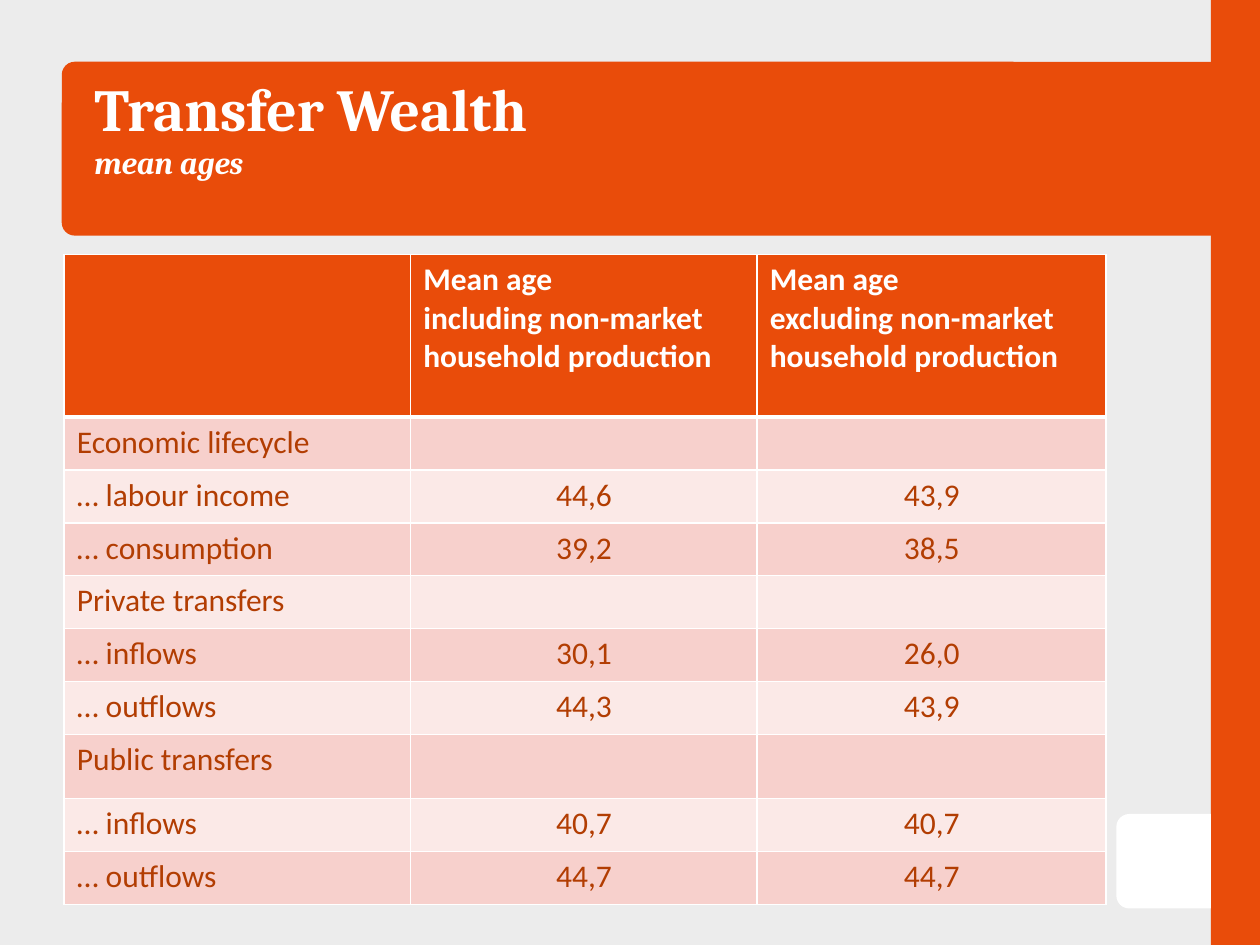
from lxml import etree
from pptx import Presentation
from pptx.dml.color import RGBColor
from pptx.enum.shapes import MSO_SHAPE
from pptx.enum.text import PP_ALIGN
from pptx.oxml.ns import qn
from pptx.util import Inches, Pt

RECTANGLE = MSO_SHAPE.RECTANGLE
ROUNDED = MSO_SHAPE.ROUNDED_RECTANGLE
ROUNDED_TOP = MSO_SHAPE.ROUND_2_SAME_RECTANGLE
LEFT, CENTER = PP_ALIGN.LEFT, PP_ALIGN.CENTER

ORANGE, RUST, WHITE, GREY = "E94C0A", "B23D02", "FFFFFF", "ECECEC"
BANDS = ("F7D0CC", "FBE9E7")
COLUMN_WIDTHS = (2.75, 2.75, 2.77)
HEADER_HEIGHT, ROW_HEIGHT, TALL_ROW_HEIGHT = 1.29, 0.42, 0.51
TALL_ROW = "Public transfers"
ROWS = (
    ("", "Mean age\nincluding non-market household production",
     "Mean age\nexcluding non-market household production"),
    ("Economic lifecycle", "", ""),
    ("… labour income", "44,6", "43,9"),
    ("… consumption", "39,2", "38,5"),
    ("Private transfers", "", ""),
    ("… inflows", "30,1", "26,0"),
    ("… outflows", "44,3", "43,9"),
    (TALL_ROW, "", ""),
    ("… inflows", "40,7", "40,7"),
    ("… outflows", "44,7", "44,7"),
)


def paint(fill, color):
    """Give a fill one solid colour."""
    fill.solid()
    fill.fore_color.rgb = RGBColor.from_string(color)


def style_run(run, font_name, size, color, bold=False, italic=False):
    """Set the font of a run."""
    font = run.font
    font.name, font.size, font.bold, font.italic = font_name, Pt(size), bold, italic
    font.color.rgb = RGBColor.from_string(color)


def add_panel(slide, kind, box, color, adjustments=(), rotation=0):
    """Add a plain filled shape."""
    shape = slide.shapes.add_shape(kind, *map(Inches, box))
    shape.shadow.inherit = False
    for index, value in enumerate(adjustments):
        shape.adjustments[index] = value
    shape.rotation = rotation
    paint(shape.fill, color)
    shape.line.fill.background()


def add_background(slide):
    """Set the backdrop, the side bar and the page tab."""
    paint(slide.background.fill, GREY)
    add_panel(slide, RECTANGLE, (9.61, 0, 0.39, 7.5), ORANGE)
    add_panel(slide, ROUNDED_TOP, (8.86, 6.46, 0.75, 0.75), WHITE, (0.136, 0), 270)


def add_title(slide, box):
    """Add the title band with its heading and subheading."""
    left, top, width, height = box
    add_panel(slide, ROUNDED, box, ORANGE, (0.075,))
    text_box = slide.shapes.add_textbox(
        Inches(left + 0.16), Inches(top), Inches(width - 0.31), Inches(height))
    frame = text_box.text_frame
    frame.word_wrap = True
    frame.margin_top = Inches(0.08)
    frame.text = "Transfer Wealth\vmean ages"
    heading, subheading = frame.paragraphs[0].runs
    style_run(heading, "Cambria", 34, WHITE, bold=True)
    style_run(subheading, "Cambria", 18, WHITE, bold=True, italic=True)


def set_borders(cell, widths):
    """Draw white borders in the order left, right, top, bottom."""
    properties = cell._tc.get_or_add_tcPr()
    for index, (side, width) in enumerate(zip("LRTB", widths)):
        line = etree.Element(qn(f"a:ln{side}"), w=str(Pt(width)))
        fill = etree.SubElement(line, qn("a:solidFill"))
        etree.SubElement(fill, qn("a:srgbClr"), val=WHITE)
        properties.insert(index, line)


def fill_cell(cell, text, row, column):
    """Write and format one table cell."""
    is_header = row == 0
    paint(cell.fill, ORANGE if is_header else BANDS[(row - 1) % 2])
    set_borders(cell, (1, 1, 3 if row == 1 else 1, 3 if is_header else 1))
    cell.text_frame.text = text
    for paragraph in cell.text_frame.paragraphs:
        paragraph.alignment = LEFT if is_header or column == 0 else CENTER
        for run in paragraph.runs:
            style_run(run, "Calibri", 18, WHITE if is_header else RUST, is_header)


def add_mean_age_table(slide, box):
    """Add the table of mean ages."""
    table = slide.shapes.add_table(
        len(ROWS), len(COLUMN_WIDTHS), *map(Inches, box)).table
    for column, width in zip(table.columns, COLUMN_WIDTHS):
        column.width = Inches(width)
    for row, texts in enumerate(ROWS):
        height = TALL_ROW_HEIGHT if texts[0] == TALL_ROW else ROW_HEIGHT
        table.rows[row].height = Inches(height if row else HEADER_HEIGHT)
        for column, text in enumerate(texts):
            fill_cell(table.cell(row, column), text, row, column)


def main():
    """Build and save the presentation."""
    presentation = Presentation()
    presentation.slide_width, presentation.slide_height = Inches(10), Inches(7.5)
    slide = presentation.slides.add_slide(presentation.slide_layouts[6])
    add_background(slide)
    add_title(slide, (0.49, 0.49, 9.39, 1.38))
    add_mean_age_table(slide, (0.51, 2.02, 8.27, 5.16))
    presentation.save("out.pptx")


if __name__ == "__main__":
    main()
